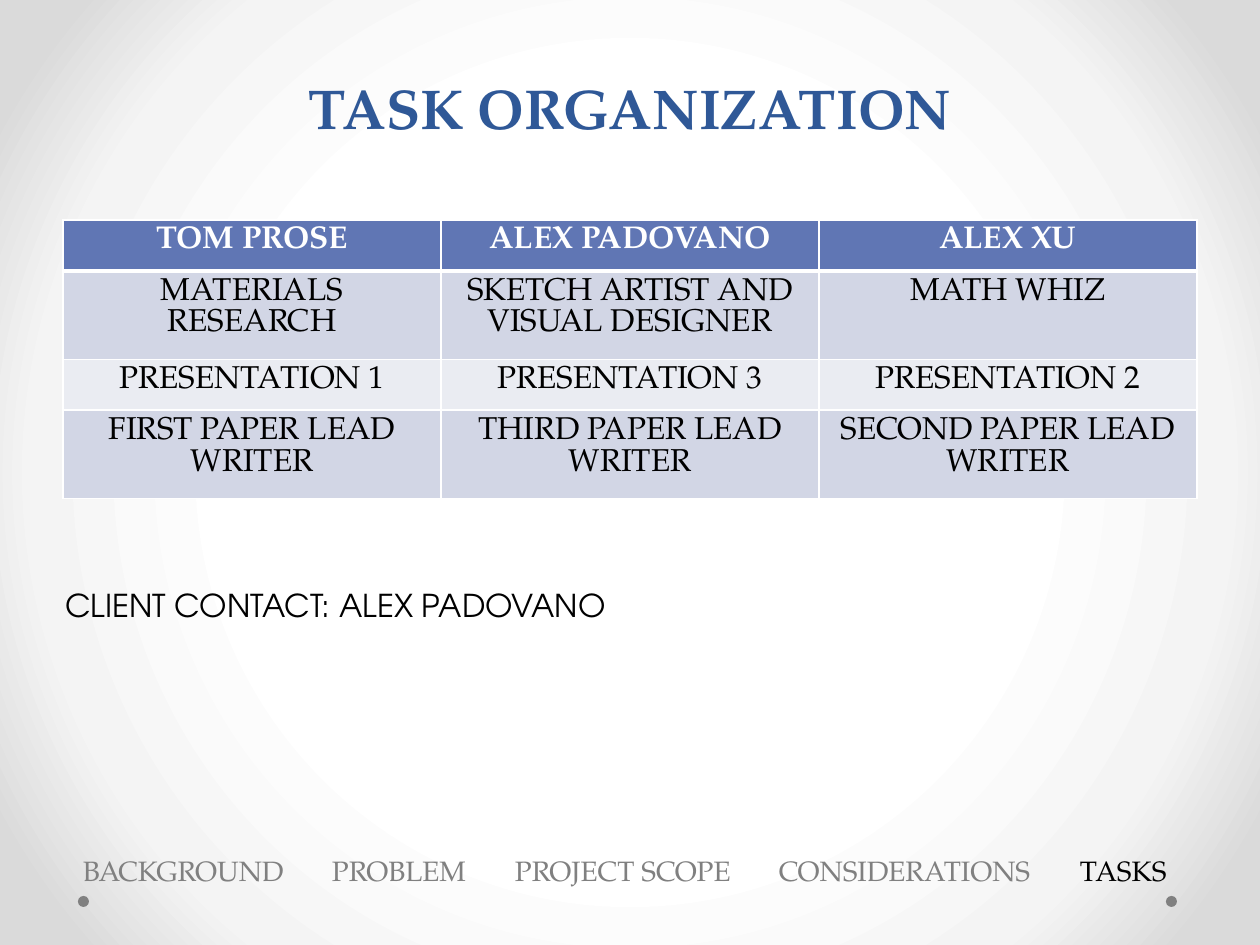
from pptx import Presentation
from pptx.dml.color import RGBColor
from pptx.enum.shapes import MSO_SHAPE
from pptx.enum.text import MSO_ANCHOR, PP_ALIGN
from pptx.oxml import parse_xml
from pptx.oxml.ns import nsdecls
from pptx.util import Emu, Pt

SCALE = 914400 // 126
SERIF, SANS = "TeX Gyre Pagella", "TeX Gyre Adventor"
BLUE, GREY, WHITE, BLACK = "2F5897", "808080", "FFFFFF", "000000"
HEAD, BANDS = "6076B4", ("EAECF2", "D2D6E5")
STOPS = ((50, WHITE), (76, "F4F4F4"), (92, "DADADA"))
ROWS = (
    ("TOM PROSE", "ALEX PADOVANO", "ALEX XU"),
    ("MATERIALS RESEARCH", "SKETCH ARTIST AND VISUAL DESIGNER", "MATH WHIZ"),
    ("PRESENTATION 1", "PRESENTATION 3", "PRESENTATION 2"),
    ("FIRST PAPER LEAD WRITER", "THIRD PAPER LEAD WRITER", "SECOND PAPER LEAD WRITER"),
)
NAV = (("BACKGROUND", 0), ("PROBLEM", 249), ("PROJECT SCOPE", 432),
       ("CONSIDERATIONS", 696), ("TASKS", 997))


def px(n):
    return Emu(n * SCALE)


def tint(code):
    return RGBColor.from_string(code)


class Deck:
    """Holds the slide and draws each kind of element on it."""

    def __init__(self, wide, high):
        self.show = Presentation()
        self.show.slide_width, self.show.slide_height = px(wide), px(high)
        self.slide = self.show.slides.add_slide(self.show.slide_layouts[6])
        self.shapes = self.slide.shapes

    def glow(self, stops):
        marks = "".join(f'<a:gs pos="{at * 1000}"><a:srgbClr val="{code}"/></a:gs>'
                        for at, code in stops)
        self.slide.element.cSld.insert(0, parse_xml(
            f'<p:bg {nsdecls("p", "a")}><p:bgPr><a:gradFill><a:gsLst>{marks}</a:gsLst>'
            '<a:path path="circle"><a:fillToRect l="50000" t="50000" r="50000" b="50000"/>'
            '</a:path></a:gradFill><a:effectLst/></p:bgPr></p:bg>'))

    def dot(self, left, top, size):
        dot = self.shapes.add_shape(MSO_SHAPE.OVAL, px(left), px(top), px(size), px(size))
        dot.shadow.inherit = False
        dot.fill.solid()
        dot.fill.fore_color.rgb = tint(GREY)
        dot.line.fill.background()

    def run(self, para, text, size, code, font=SERIF, bold=False):
        run = para.add_run()
        run.text = text
        run.font.size, run.font.name, run.font.bold = Pt(size), font, bold
        run.font.color.rgb = tint(code)

    def box(self, left, top, wide, high, anchor=MSO_ANCHOR.TOP):
        frame = self.shapes.add_textbox(px(left), px(top), px(wide), px(high)).text_frame
        frame.word_wrap = True
        frame.vertical_anchor = anchor
        return frame

    def title(self, text):
        para = self.box(63, -73, 1134, 220, MSO_ANCHOR.BOTTOM).paragraphs[0]
        para.alignment = PP_ALIGN.CENTER
        para.line_spacing = Pt(58)
        self.run(para, text, 32, BLUE, bold=True)

    def note(self, text):
        para = self.box(53, 580, 819, 50).paragraphs[0]
        self.run(para, text, 18, BLACK, SANS)

    def nav(self, items):
        frame = self.box(21, 847, 1207, 47)
        frame.margin_left = px(62)
        para = frame.paragraphs[0]
        tabs = "".join(f'<a:tab pos="{px(at)}" algn="l"/>' for _, at in items[1:])
        para._p.get_or_add_pPr().append(
            parse_xml(f'<a:tabLst {nsdecls("a")}>{tabs}</a:tabLst>'))
        for name, at in items:
            last = name == items[-1][0]
            self.run(para, f"\t{name}" if at else name, 16, BLACK if last else GREY)

    def edge(self, cell, side, width):
        cell._tc.get_or_add_tcPr().append(parse_xml(
            f'<a:ln{side} {nsdecls("a")} w="{Pt(width)}"><a:solidFill>'
            f'<a:srgbClr val="{WHITE}"/></a:solidFill></a:ln{side}>'))

    def table(self, rows, left, top, wide, high):
        count = len(rows[0])
        grid = self.shapes.add_table(len(rows), count, px(left), px(top),
                                     px(wide * count), px(high * len(rows))).table
        for r, row in enumerate(rows):
            for c, text in enumerate(row):
                cell = grid.cell(r, c)
                for side in "LRTB":
                    heavy = (side, r) in (("B", 0), ("T", 1))
                    self.edge(cell, side, 3 if heavy else 1)
                cell.fill.solid()
                cell.fill.fore_color.rgb = tint(BANDS[r % 2] if r else HEAD)
                para = cell.text_frame.paragraphs[0]
                para.alignment = PP_ALIGN.CENTER
                self.run(para, text, 18, BLACK if r else WHITE, bold=not r)


def main():
    deck = Deck(1260, 945)
    deck.glow(STOPS)
    for left in (1166, 78):
        deck.dot(left, 896, 11)
    deck.title("TASK ORGANIZATION")
    deck.table(ROWS, 63, 220, 378, 51)
    deck.nav(NAV)
    deck.note("CLIENT CONTACT: ALEX PADOVANO")
    deck.show.save("out.pptx")


if __name__ == "__main__":
    main()
